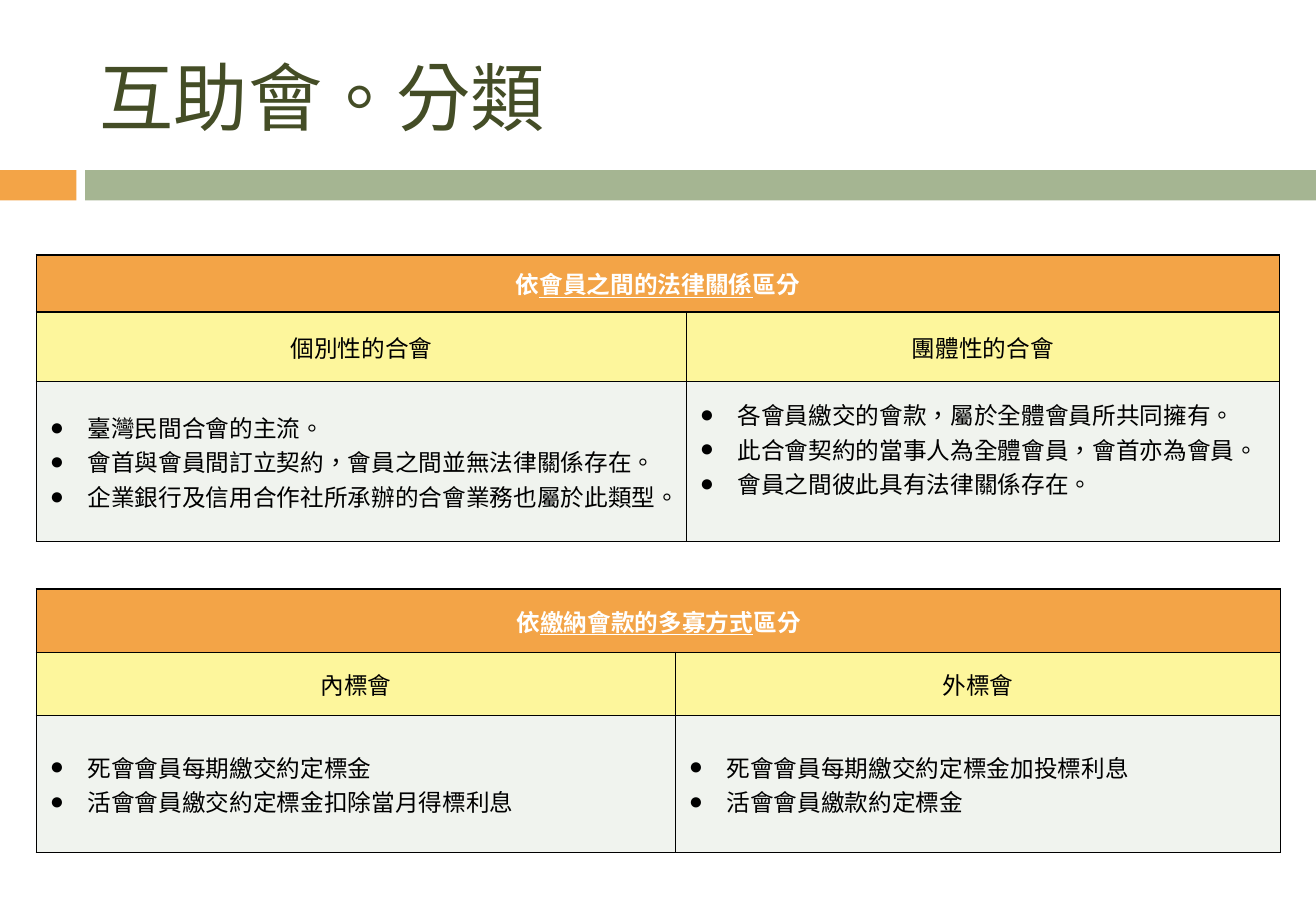
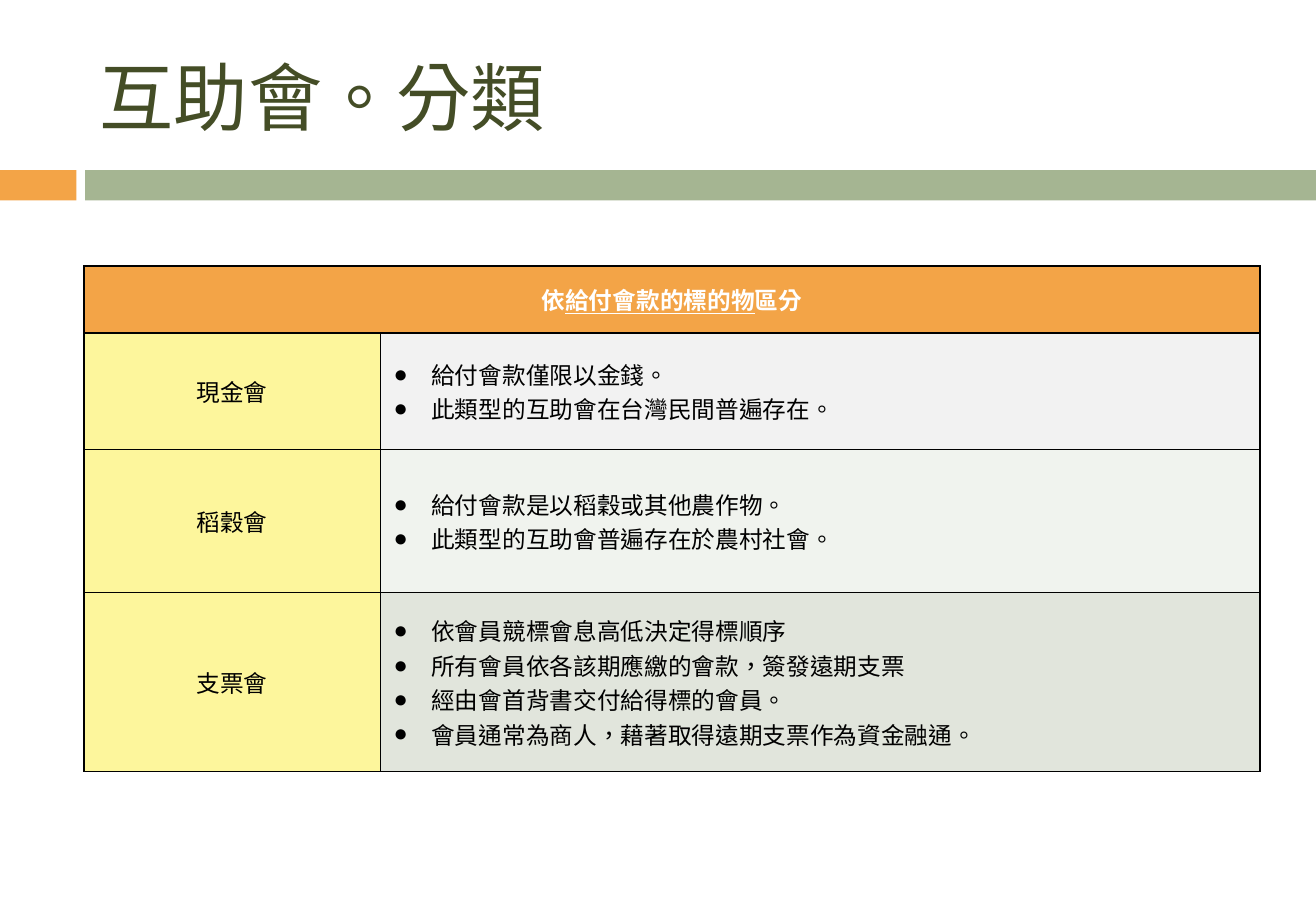
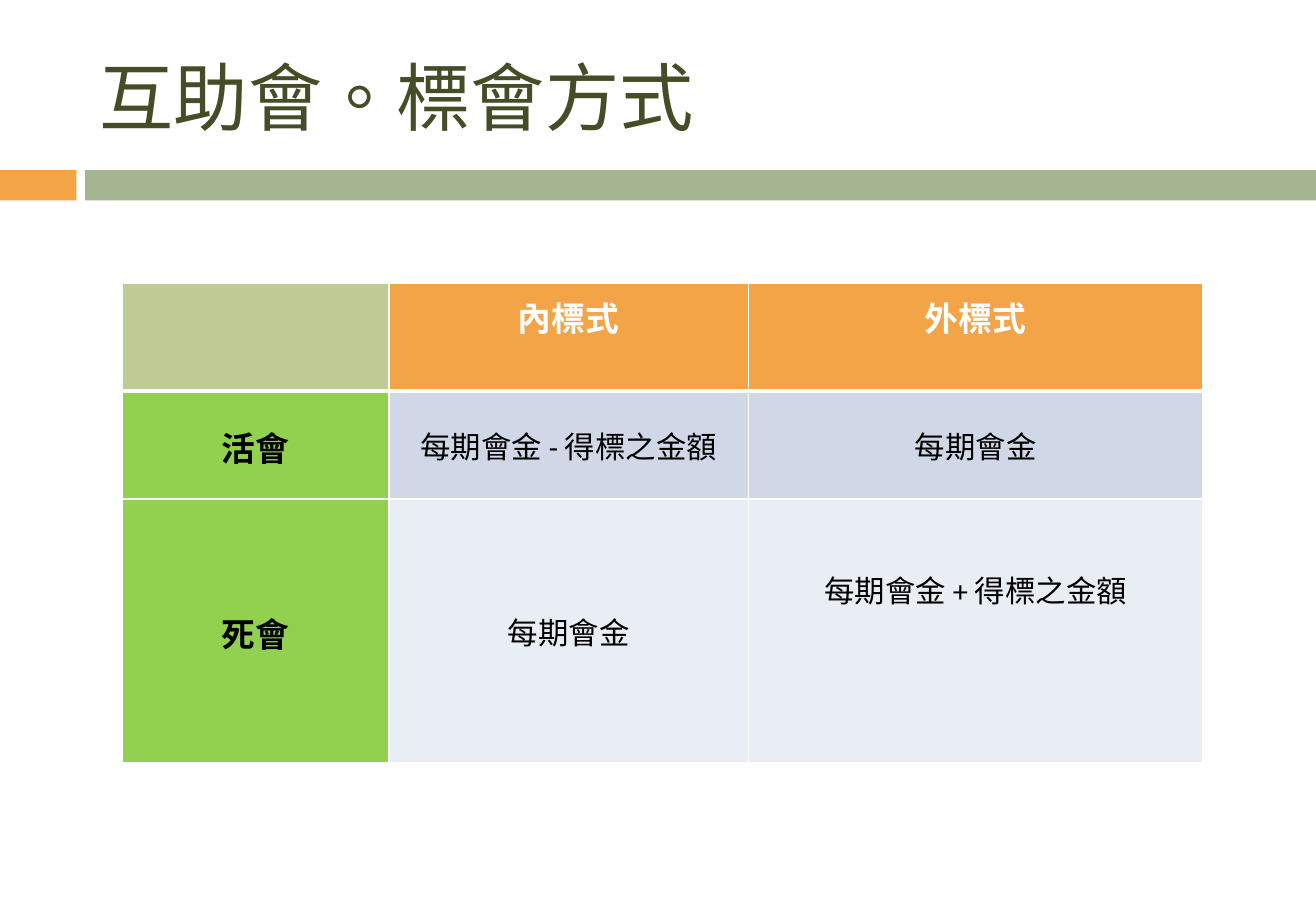
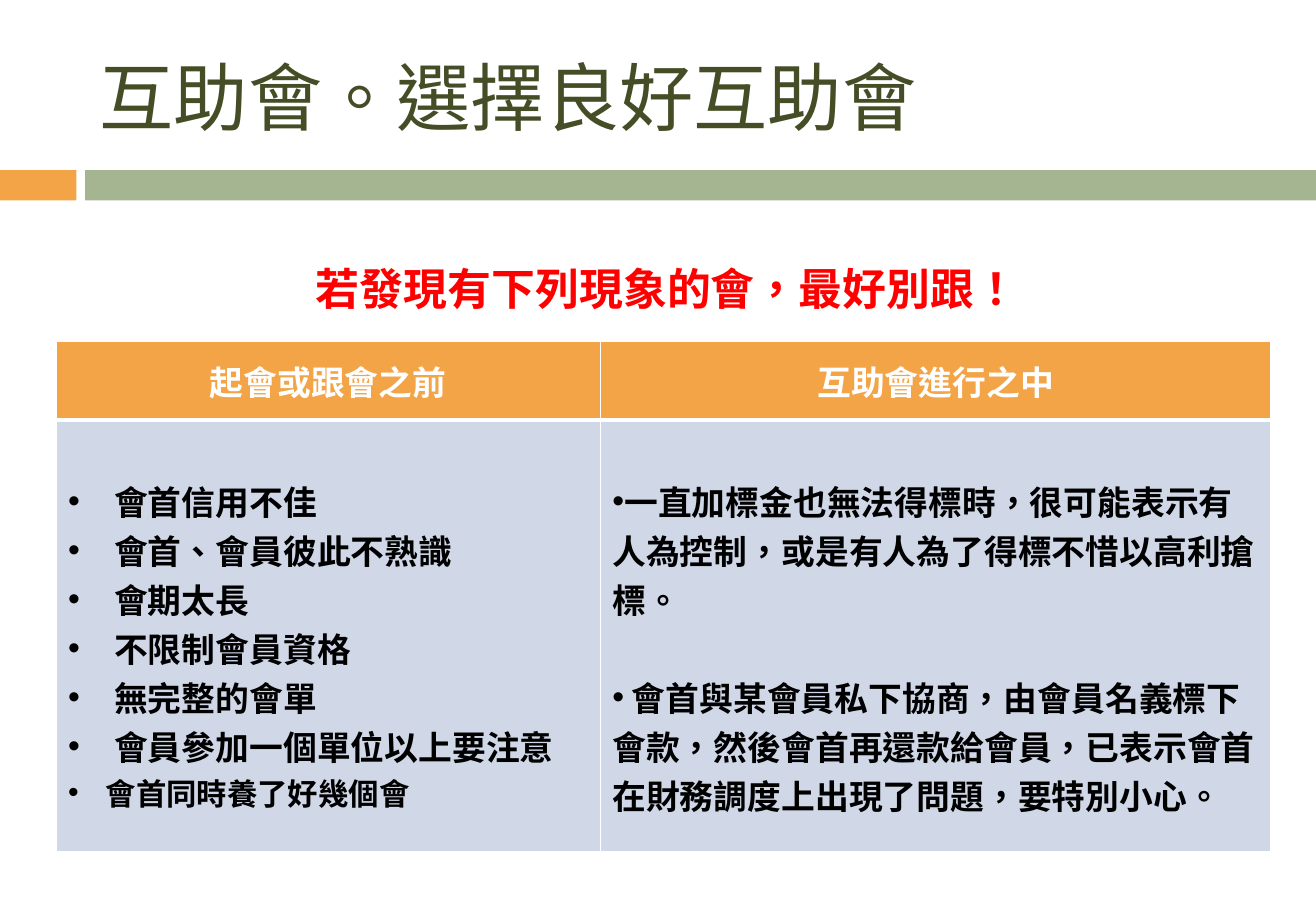
from lxml import etree
from pptx import Presentation
from pptx.dml.color import RGBColor
from pptx.enum.shapes import MSO_SHAPE
from pptx.enum.text import MSO_ANCHOR, MSO_AUTO_SIZE, PP_ALIGN
from pptx.oxml.ns import qn
from pptx.util import Inches, Pt

RECTANGLE = MSO_SHAPE.RECTANGLE
TOP, MIDDLE = MSO_ANCHOR.TOP, MSO_ANCHOR.MIDDLE
LEFT, CENTER, JUSTIFY = PP_ALIGN.LEFT, PP_ALIGN.CENTER, PP_ALIGN.JUSTIFY
NO_AUTOFIT = MSO_AUTO_SIZE.NONE
CONTENT_LAYOUT, TITLE_LAYOUT = 1, 5

WIDTH, HEIGHT = 10.83, 7.5
ORANGE, SAGE, OLIVE = "F3A447", "A5B592", "444D26"
YELLOW, PALE, GRAY, MIST = "FDF69C", "F0F3EE", "F2F2F2", "E1E5DC"
GREEN, MOSS, BLUE, LIGHT_BLUE = "92D050", "BECB95", "D0D8E8", "E9EDF4"
BLACK, WHITE, RED = "000000", "FFFFFF", "FF0000"
EAST_ASIAN = "Noto Sans CJK TC"

BANDS = [(0, 0.63, ORANGE), (0.7, WIDTH - 0.7, SAGE)]
TITLE_BOX = (0.72, 0.25, 9.66, 1.08)
TITLE_TEXT = {"size": 44, "font": "Noto Sans CJK JP", "east": "Noto Sans CJK JP", "color": OLIVE}
WARNING_BOX = (2.5, 2.1, 6.77, 0.63)
WARNING = "若發現有下列現象的會，最好別跟！"

BASE = {"size": 14, "font": "Calibri", "color": BLACK, "bold": False, "align": LEFT,
        "anchor": MIDDLE, "top": 0.05, "bottom": 0.05, "side": 0.11}
CENTERED = {**BASE, "align": CENTER}
BANNER = {**CENTERED, "fill": ORANGE, "color": WHITE, "bold": True}
LABEL = {**CENTERED, "fill": YELLOW}
POINTS = {**BASE, "fill": PALE, "bullet": "●", "indent": 0.31}
RAISED = {**POINTS, "bottom": 0.26}
JUSTIFIED = {**POINTS, "align": JUSTIFY}
METHOD = {**BANNER, "size": 20, "font": "Arial", "anchor": TOP, "top": 0.08}
MEMBER = {**METHOD, "fill": GREEN, "color": BLACK, "anchor": MIDDLE}
PAYMENT = {**CENTERED, "fill": BLUE, "size": 18}
LATE_PAYMENT = {**PAYMENT, "fill": LIGHT_BLUE}
STAGE = {**BANNER, "size": 20, "font": EAST_ASIAN, "side": 0.1}
SIGNS = {**BASE, "fill": BLUE, "size": 20, "font": EAST_ASIAN, "bold": True, "anchor": TOP,
         "top": 0.46, "side": 0.1, "bullet": "•", "indent": 0.38}

SLIDES = [
    ("互助會。分類", [
        {"at": (0.3, 2.1), "columns": [5.35, 4.88], "rows": [0.47, 0.57, 1.32], "grid": True,
         "cells": [
             [(BANNER, ["依|會員之間的法律關係|區分"])],
             [(LABEL, ["個別性的合會"]), (LABEL, ["團體性的合會"])],
             [(POINTS, ["臺灣民間合會的主流。",
                        "會首與會員間訂立契約，會員之間並無法律關係存在。",
                        "企業銀行及信用合作社所承辦的合會業務也屬於此類型。"]),
              (RAISED, ["各會員繳交的會款，屬於全體會員所共同擁有。",
                        "此合會契約的當事人為全體會員，會首亦為會員。",
                        "會員之間彼此具有法律關係存在。"])]]},
        {"at": (0.3, 4.85), "columns": [5.26, 4.98], "rows": [0.52, 0.52, 1.13], "grid": True,
         "cells": [
             [(BANNER, ["依|繳納會款的多寡方式|區分"])],
             [(LABEL, ["內標會"]), (LABEL, ["外標會"])],
             [(POINTS, ["死會會員每期繳交約定標金",
                        "活會會員繳交約定標金扣除當月得標利息"]),
              (POINTS, ["死會會員每期繳交約定標金加投標利息",
                        "活會會員繳款約定標金"])]]}]),
    ("互助會。分類", [
        {"at": (0.69, 2.19), "columns": [2.44, 7.24], "rows": [0.55, 0.96, 1.18, 1.47],
         "grid": True,
         "cells": [
             [(BANNER, ["依|給付會款的標的物|區分"])],
             [(LABEL, ["現金會"]),
              ({**JUSTIFIED, "fill": GRAY}, ["給付會款僅限以金錢。",
                                             "此類型的互助會在台灣民間普遍存在。"])],
             [(LABEL, ["稻穀會"]),
              (JUSTIFIED, ["給付會款是以稻穀或其他農作物。",
                           "此類型的互助會普遍存在於農村社會。"])],
             [(LABEL, ["支票會"]),
              ({**JUSTIFIED, "fill": MIST}, ["依會員競標會息高低決定得標順序",
                                             "所有會員依各該期應繳的會款，簽發遠期支票",
                                             "經由會首背書交付給得標的會員。",
                                             "會員通常為商人，藉著取得遠期支票作為資金融通。"])]]}]),
    ("互助會。標會方式", [
        {"at": (1.01, 2.33), "columns": [2.19, 2.96, 3.74], "rows": [0.89, 0.89, 2.17],
         "grid": False,
         "cells": [
             [({**METHOD, "fill": MOSS}, []), (METHOD, ["內標式"]), (METHOD, ["外標式"])],
             [(MEMBER, ["活會"]), (PAYMENT, ["每期會金 - 得標之金額"]), (PAYMENT, ["每期會金"])],
             [(MEMBER, ["死會"]), (LATE_PAYMENT, ["每期會金"]),
              ({**LATE_PAYMENT, "bottom": 0.74}, ["每期會金 + 得標之金額"])]]}]),
    ("互助會。選擇良好互助會", [
        {"at": (0.46, 2.81), "columns": [4.48, 5.52], "rows": [0.65, 3.55], "grid": False,
         "cells": [
             [(STAGE, ["起會或跟會之前"]), (STAGE, ["互助會進行之中"])],
             [(SIGNS, ["會首信用不佳", "會首、會員彼此不熟識", "會期太長", "不限制會員資格",
                       "無完整的會單", "會員參加一個單位以上要注意",
                       ("會首同時養了好幾個會", {"size": 18, "indent": 0.31})]),
              ({**SIGNS, "indent": 0},
               ["一直加標金也無法得標時，很可能表示有人為控制，或是有人為了得標不惜以高利搶標。",
                (" 會首與某會員私下協商，由會員名義標下會款，然後會首再還款給會員，"
                 "已表示會首在財務調度上出現了問題，要特別小心。", {"before": 29})])]]}]),
]


def rgb(value):
    return RGBColor.from_string(value)


def place(shape, box):
    shape.left, shape.top, shape.width, shape.height = map(Inches, box)


def format_run(run, style):
    font = run.font
    font.size = Pt(style["size"])
    font.name = style["font"]
    font.bold = style.get("bold", False)
    font.color.rgb = rgb(style["color"])
    properties = run._r.get_or_add_rPr()
    properties.set("lang", "zh-TW")
    east = etree.Element(qn("a:ea"), typeface=style.get("east", EAST_ASIAN))
    properties.find(qn("a:latin")).addnext(east)


def set_indent(paragraph, inches, bullet=None):
    properties = paragraph._p.get_or_add_pPr()
    properties.set("marL", str(Inches(inches)))
    properties.set("indent", str(-Inches(inches)))
    if bullet:
        etree.SubElement(properties, qn("a:buFont"), typeface="Arial")
        etree.SubElement(properties, qn("a:buChar"), char=bullet)
    else:
        etree.SubElement(properties, qn("a:buNone"))


def write_paragraph(paragraph, text, style):
    paragraph.alignment = style["align"]
    if "before" in style:
        paragraph.space_before = Pt(style["before"])
    if "bullet" in style:
        set_indent(paragraph, style["indent"], style["bullet"])
    for index, part in enumerate(text.split("|")):
        run = paragraph.add_run()
        run.text = part
        format_run(run, style)
        if index % 2:
            run.font.underline = True


def set_borders(cell, color, top, bottom):
    properties = cell._tc.get_or_add_tcPr()
    sides = [("L", 1), ("R", 1), ("T", top), ("B", bottom)]
    for index, (side, points) in enumerate(sides):
        line = etree.Element(qn(f"a:ln{side}"), w=str(Pt(points)))
        fill = etree.SubElement(line, qn("a:solidFill"))
        etree.SubElement(fill, qn("a:srgbClr"), val=color)
        properties.insert(index, line)


def fill_cell(cell, style, texts):
    cell.fill.solid()
    cell.fill.fore_color.rgb = rgb(style["fill"])
    cell.vertical_anchor = style["anchor"]
    cell.margin_left = cell.margin_right = Inches(style["side"])
    cell.margin_top, cell.margin_bottom = Inches(style["top"]), Inches(style["bottom"])
    frame = cell.text_frame
    for index, item in enumerate(texts):
        text, changes = (item, {}) if isinstance(item, str) else item
        paragraph = frame.add_paragraph() if index else frame.paragraphs[0]
        write_paragraph(paragraph, text, {**style, **changes})


def add_grid(slide, content):
    columns, rows = content["columns"], content["rows"]
    box = map(Inches, (*content["at"], sum(columns), sum(rows)))
    table = slide.shapes.add_table(len(rows), len(columns), *box).table
    table.first_row = table.horz_banding = False
    for column, width in zip(table.columns, columns):
        column.width = Inches(width)
    for row_index, (row, height) in enumerate(zip(table.rows, rows)):
        row.height = Inches(height)
        for cell in row.cells:
            if content["grid"]:
                set_borders(cell, BLACK, 1, 1)
            else:
                set_borders(cell, WHITE, 3 if row_index == 1 else 1, 3 if row_index == 0 else 1)
        entries = content["cells"][row_index]
        if len(entries) < len(columns):
            row.cells[0].merge(row.cells[len(columns) - 1])
        for cell, (style, texts) in zip(row.cells, entries):
            fill_cell(cell, style, texts)


def add_titled_slide(presentation, title, layout):
    slide = presentation.slides.add_slide(presentation.slide_layouts[layout])
    frame = slide.shapes.title.text_frame
    frame.text = title
    frame.auto_size = NO_AUTOFIT
    frame.vertical_anchor = MIDDLE
    frame.paragraphs[0].alignment = LEFT
    format_run(frame.paragraphs[0].runs[0], TITLE_TEXT)
    return slide


def add_master_bands(presentation, slide):
    master = presentation.slide_master
    for left, width, color in BANDS:
        band = slide.shapes.add_shape(RECTANGLE, 0, 0, 0, 0)
        place(band, (left, 1.4, width, 0.25))
        band.shadow.inherit = False
        band.fill.solid()
        band.fill.fore_color.rgb = rgb(color)
        band.line.fill.background()
        master.shapes._spTree.insert(2, band._element)


def add_warning(slide):
    body = slide.placeholders[1]
    place(body, WARNING_BOX)
    frame = body.text_frame
    frame.text = WARNING
    frame.auto_size = NO_AUTOFIT
    paragraph = frame.paragraphs[0]
    paragraph.space_before = Pt(7)
    set_indent(paragraph, 0.35)
    format_run(paragraph.runs[0], {**BASE, "size": 26, "color": RED, "bold": True})


def main():
    presentation = Presentation()
    presentation.slide_width, presentation.slide_height = Inches(WIDTH), Inches(HEIGHT)
    place(presentation.slide_master.placeholders[0], TITLE_BOX)
    last = len(SLIDES) - 1
    for index, (title, tables) in enumerate(SLIDES):
        layout = CONTENT_LAYOUT if index == last else TITLE_LAYOUT
        slide = add_titled_slide(presentation, title, layout)
        if index == 0:
            add_master_bands(presentation, slide)
        for content in tables:
            add_grid(slide, content)
    add_warning(slide)
    presentation.save("out.pptx")


if __name__ == "__main__":
    main()
